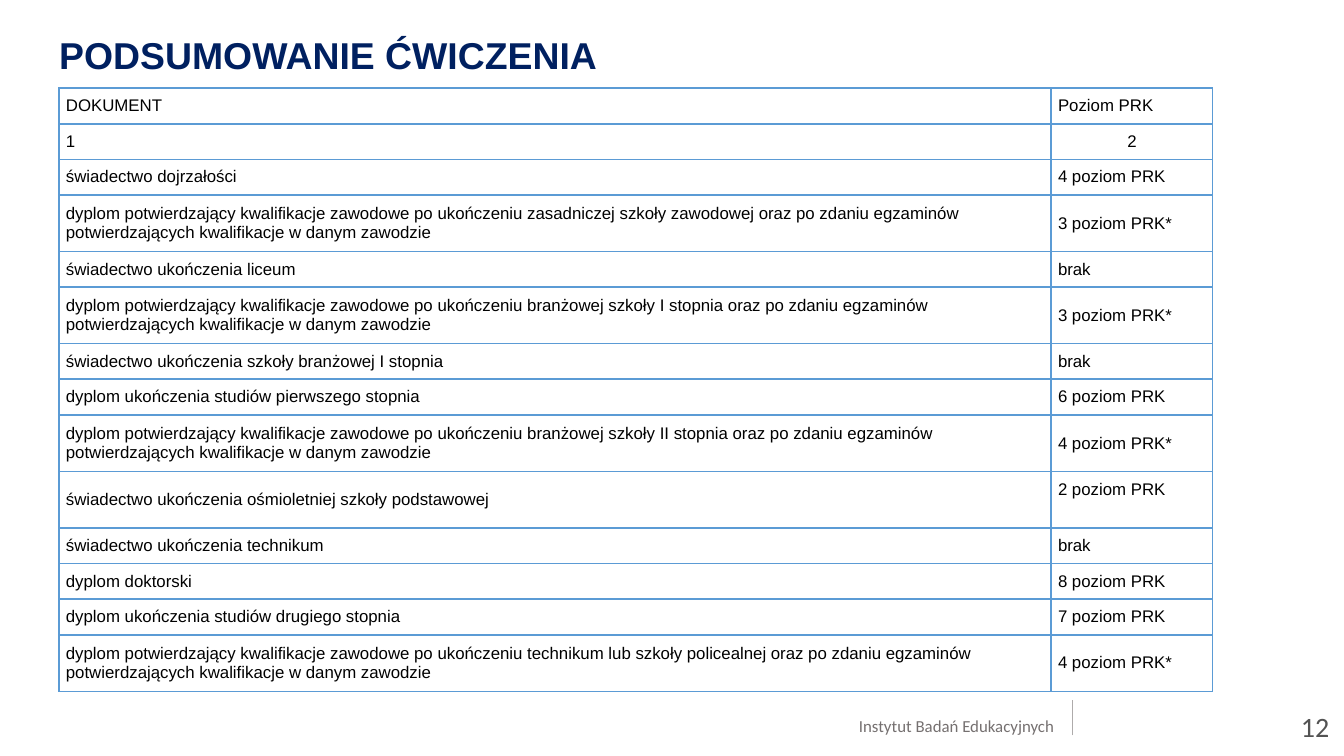
from lxml import etree
from pptx import Presentation
from pptx.dml.color import RGBColor
from pptx.enum.shapes import MSO_CONNECTOR
from pptx.enum.text import MSO_ANCHOR, PP_ALIGN
from pptx.oxml import parse_xml
from pptx.oxml.ns import nsdecls, qn
from pptx.util import Pt

NAVY = RGBColor(0x00, 0x20, 0x60)
BLACK = RGBColor(0x00, 0x00, 0x00)
BLUE = RGBColor(0x5B, 0x9B, 0xD5)
GREY = RGBColor(0x75, 0x70, 0x70)
DARK_GREY = RGBColor(0x53, 0x53, 0x53)
LIGHT_GREY = RGBColor(0xAE, 0xAB, 0xAB)

EXAM = "dyplom potwierdzający kwalifikacje zawodowe po ukończeniu {} oraz po zdaniu egzaminów potwierdzających kwalifikacje w danym zawodzie"
ROWS = [
    ("DOKUMENT", "Poziom PRK"),
    ("1", "2"),
    ("świadectwo dojrzałości", "4 poziom PRK"),
    (EXAM.format("zasadniczej szkoły zawodowej"), "3 poziom PRK*"),
    ("świadectwo ukończenia liceum", "brak"),
    (EXAM.format("branżowej szkoły I stopnia"), "3 poziom PRK*"),
    ("świadectwo ukończenia szkoły branżowej I stopnia", "brak"),
    ("dyplom ukończenia studiów pierwszego stopnia", "6 poziom PRK"),
    (EXAM.format("branżowej szkoły II stopnia"), "4 poziom PRK*"),
    ("świadectwo ukończenia ośmioletniej szkoły podstawowej", "2 poziom PRK"),
    ("świadectwo ukończenia technikum", "brak"),
    ("dyplom doktorski", "8 poziom PRK"),
    ("dyplom ukończenia studiów drugiego stopnia", "7 poziom PRK"),
    (EXAM.format("technikum lub szkoły policealnej"), "4 poziom PRK*"),
]
PRIMARY_ROW = 9
TALL_ROWS = (3, 5, 8, PRIMARY_ROW, 13)
ROW_H, TALL_H = 19.08, 30.32
COL_W = (531.5, 86.4)


def add_run(p, text, size, font, color, bold=False):
    r = p.add_run()
    r.text = text
    r.font.size = Pt(size)
    r.font.name = font
    r.font.bold = bold
    r.font.color.rgb = color


def add_text(box, text, size, font, color, align, inset=(0, 0), bold=False):
    tf = s.shapes.add_textbox(*[Pt(v) for v in box]).text_frame
    tf.word_wrap = True
    tf.margin_left = tf.margin_right = Pt(inset[0])
    tf.margin_top = tf.margin_bottom = Pt(inset[1])
    p = tf.paragraphs[0]
    p.alignment = align
    add_run(p, text, size, font, color, bold)
    return tf


prs = Presentation()
prs.slide_width, prs.slide_height = Pt(720), Pt(405)
s = prs.slides.add_slide(prs.slide_layouts[6])

# Footer
add_text((444, 383.2, 120.5, 10), "Instytut Badań Edukacyjnych", 9, "Calibri", GREY, PP_ALIGN.RIGHT)
divider = s.shapes.add_connector(MSO_CONNECTOR.STRAIGHT, Pt(574.5), Pt(394), Pt(574.5), Pt(375.3))
divider.line.color.rgb = LIGHT_GREY
divider.line.width = Pt(0.75)
etree.SubElement(divider._element.spPr, qn("a:effectLst"))

# Title
title = add_text((31.7, 20.2, 576, 33.8), "PODSUMOWANIE ĆWICZENIA", 20, "Arial", NAVY, PP_ALIGN.LEFT, bold=True)
title.paragraphs[0].line_spacing = 0.9

# Table
height = sum(TALL_H if i in TALL_ROWS else ROW_H for i in range(len(ROWS)))
table = s.shapes.add_table(len(ROWS), 2, Pt(31.7), Pt(47.2), Pt(sum(COL_W)), Pt(height)).table
table.first_row = table.horz_banding = False
for col, width in zip(table.columns, COL_W):
    col.width = Pt(width)

for i, texts in enumerate(ROWS):
    table.rows[i].height = Pt(TALL_H if i in TALL_ROWS else ROW_H)
    for j, text in enumerate(texts):
        cell = table.cell(i, j)
        cell.fill.background()
        cell.vertical_anchor = MSO_ANCHOR.MIDDLE
        cell.margin_left = cell.margin_right = Pt(3.6)
        cell.margin_top = cell.margin_bottom = Pt(3.6)
        p = cell.text_frame.paragraphs[0]
        p.alignment = PP_ALIGN.CENTER if (i, j) == (1, 1) else PP_ALIGN.LEFT
        add_run(p, text, 9, "Arial", BLACK)
        # Borders come before the fill in the cell properties
        tcPr = cell._tc.get_or_add_tcPr()
        for k, side in enumerate("LRTB"):
            tcPr.insert(k, parse_xml(
                f'<a:ln{side} {nsdecls("a")} w="{Pt(1)}"><a:solidFill>'
                f'<a:srgbClr val="{BLUE}"/></a:solidFill></a:ln{side}>'))

# The level of primary school sits above the middle of its row
table.cell(PRIMARY_ROW, 1).margin_bottom = Pt(13.9)

# Slide number
number = add_text((673.9, 373.7, 43.2, 31), "12", 15, "Calibri", DARK_GREY, PP_ALIGN.RIGHT, (5, 2.9))
number.vertical_anchor = MSO_ANCHOR.MIDDLE

prs.save("out.pptx")
